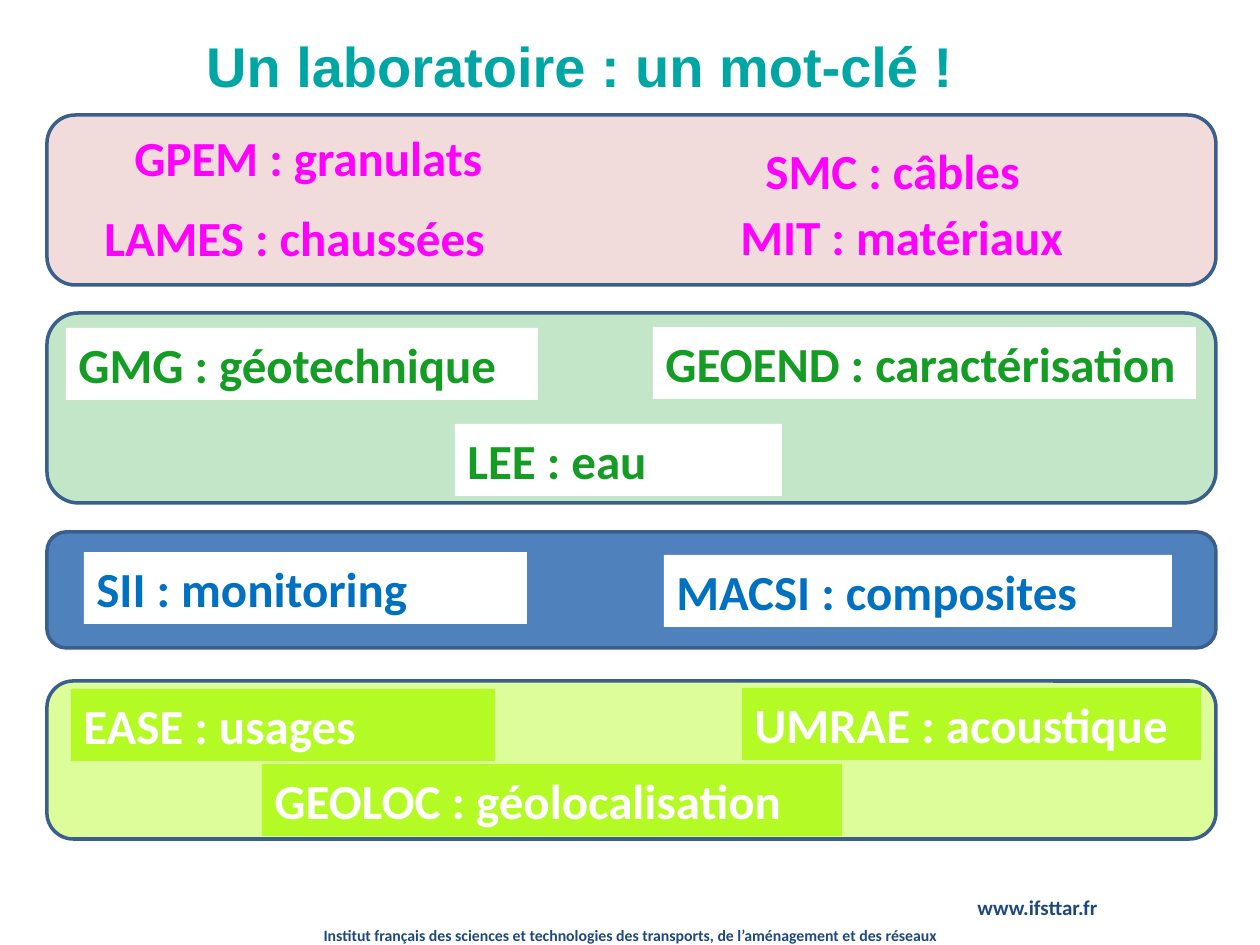
from dataclasses import dataclass

from lxml.etree import SubElement
from pptx import Presentation
from pptx.dml.color import RGBColor
from pptx.enum.shapes import MSO_SHAPE
from pptx.enum.text import MSO_ANCHOR, MSO_AUTO_SIZE, PP_ALIGN
from pptx.oxml.ns import qn
from pptx.util import Emu, Pt

PIXELS_PER_INCH = 126
PANEL_LEFT, PANEL_WIDTH = 47, 1169
LABEL_HEIGHT = 72


def px(length):
    return Emu(round(length * 914400 / PIXELS_PER_INCH))


def rgb(color):
    return RGBColor.from_string(color)


@dataclass(frozen=True)
class Theme:
    teal: str = "00A6A4"
    navy: str = "1F497D"
    outline: str = "3A5F8C"
    white: str = "FFFFFF"
    rose: str = "F2DCDB"
    magenta: str = "FF00FF"
    lime: str = "B4FB25"
    green: str = "149C24"
    steel: str = "4F81BD"
    blue: str = "0070C0"
    title_size: int = 32
    label_size: int = 28
    web_size: int = 12
    footer_size: int = 9
    heading_font: str = "Arial"
    body_font: str = "Calibri"


@dataclass(frozen=True)
class Panel:
    top: int
    height: int
    fill: str
    text_color: str
    labels: tuple  # (text, left, top, width)
    opacity: int = 100
    label_fill: str | None = None


class SlideBuilder:
    """Holds the theme and the slide being filled."""

    def __init__(self, slide, theme):
        self.slide = slide
        self.theme = theme

    def set_text(self, box, text, size, color, font=None, align=None, anchor=MSO_ANCHOR.TOP):
        frame = box.text_frame
        frame_format = {"word_wrap": True, "auto_size": MSO_AUTO_SIZE.NONE, "vertical_anchor": anchor}
        for name, value in frame_format.items():
            setattr(frame, name, value)
        para = frame.paragraphs[0]
        para.alignment = align
        span = para.add_run()
        span.text = text
        font_format = {"name": font or self.theme.body_font, "size": Pt(size), "bold": True}
        for name, value in font_format.items():
            setattr(span.font, name, value)
        span.font.color.rgb = rgb(color)

    def title(self, text, left, top, width, height):
        box = self.slide.shapes.title
        place = {"left": left, "top": top, "width": width, "height": height}
        for name, value in place.items():
            setattr(box, name, px(value))
        self.set_text(box, text, self.theme.title_size, self.theme.teal,
                      self.theme.heading_font, PP_ALIGN.CENTER, MSO_ANCHOR.MIDDLE)

    def text(self, text, left, top, width, height, size, align=None):
        box = self.slide.shapes.add_textbox(px(left), px(top), px(width), px(height))
        self.set_text(box, text, size, self.theme.navy, align=align)

    def panel(self, panel):
        group = self.slide.shapes.add_group_shape()
        frame = group.shapes.add_shape(MSO_SHAPE.ROUNDED_RECTANGLE, px(PANEL_LEFT),
                                       px(panel.top), px(PANEL_WIDTH), px(panel.height))
        frame.shadow.inherit = False
        frame.line.color.rgb = rgb(self.theme.outline)
        frame.line.width = Pt(2)
        self.fill(frame, panel.fill, panel.opacity)
        for text, left, top, width in panel.labels:
            box = group.shapes.add_textbox(px(left), px(top), px(width), px(LABEL_HEIGHT))
            if panel.label_fill:
                self.fill(box, panel.label_fill)
            self.set_text(box, text, self.theme.label_size, panel.text_color)

    def fill(self, shape, color, opacity=100):
        shape.fill.solid()
        shape.fill.fore_color.rgb = rgb(color)
        if opacity < 100:
            solid_fill = shape.element.spPr.find(qn("a:solidFill"))
            SubElement(solid_fill[0], qn("a:alpha")).set("val", str(opacity * 1000))


def main():
    theme = Theme()
    deck = Presentation()
    deck.slide_width, deck.slide_height = px(1260), px(945)
    page = SlideBuilder(deck.slides.add_slide(deck.slide_layouts[5]), theme)

    page.text("Institut français des sciences et technologies des transports, "
              "de l’aménagement et des réseaux", 0, 920, 1260, 31,
              theme.footer_size, PP_ALIGN.CENTER)
    page.text("www.ifsttar.fr", 965, 888, 149, 38, theme.web_size)
    page.title("Un laboratoire : un mot-clé !", 64, -14, 1032, 158)

    panels = (
        Panel(115, 170, theme.rose, theme.magenta, (
            ("LAMES : chaussées", 92, 201, 461),
            ("GPEM : granulats", 122, 121, 441),
            ("MIT : matériaux", 728, 200, 378),
            ("SMC : câbles", 753, 134, 387))),
        Panel(681, 158, theme.lime, theme.white, (
            ("UMRAE : acoustique", 742, 688, 459),
            ("EASE : usages", 71, 689, 424),
            ("GEOLOC : géolocalisation", 262, 764, 580)), 46, theme.lime),
        Panel(313, 190, theme.green, theme.green, (
            ("LEE : eau", 455, 424, 327),
            ("GEOEND : caractérisation", 653, 327, 543),
            ("GMG : géotechnique", 66, 328, 472)), 25, theme.white),
        Panel(532, 116, theme.steel, theme.blue, (
            ("SII : monitoring", 84, 552, 443),
            ("MACSI : composites", 664, 555, 508)), label_fill=theme.white),
    )
    for panel in panels:
        page.panel(panel)
    deck.save("out.pptx")


if __name__ == "__main__":
    main()
